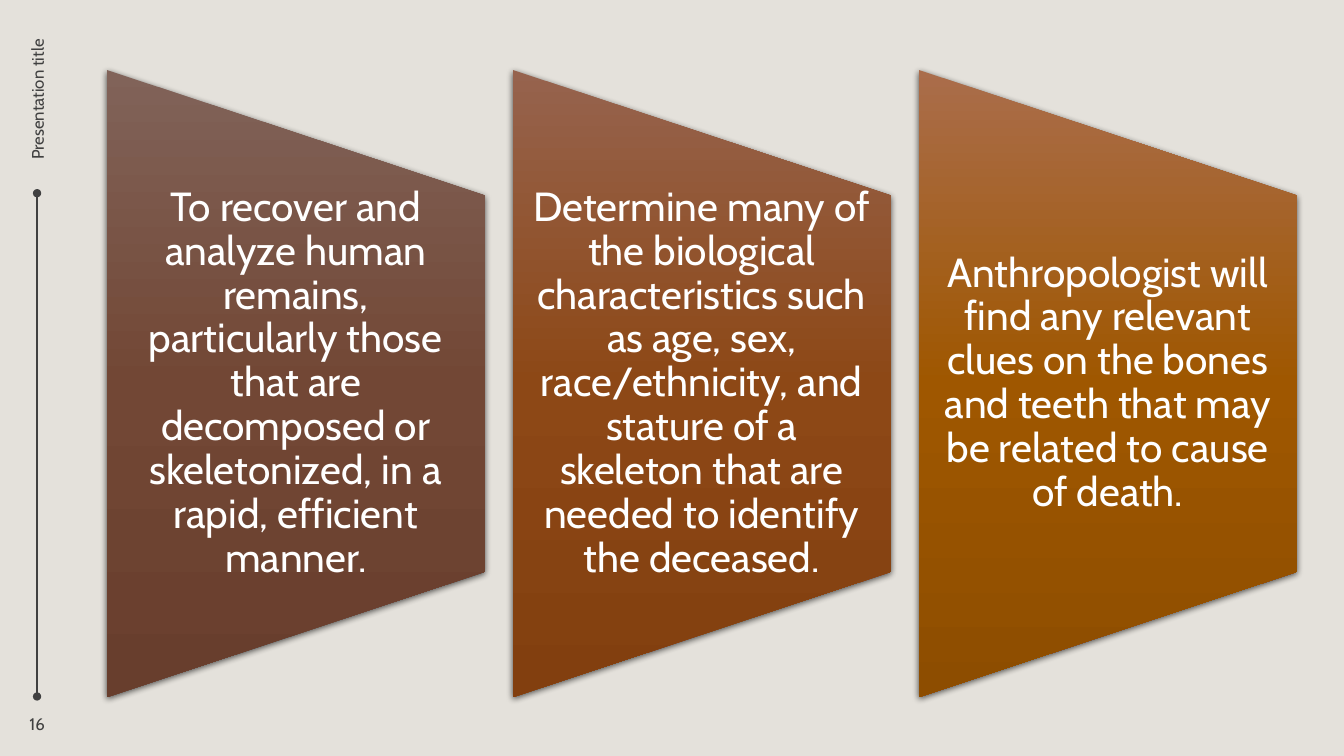
"""Build a slide with three tapered panels on the tasks of an anthropologist."""
from lxml import etree
from pptx import Presentation
from pptx.dml.color import RGBColor
from pptx.enum.shapes import MSO_CONNECTOR, MSO_SHAPE
from pptx.enum.text import MSO_ANCHOR, PP_ALIGN
from pptx.oxml import parse_xml
from pptx.oxml.ns import nsdecls, qn
from pptx.util import Pt

STRAIGHT = MSO_CONNECTOR.STRAIGHT
TAPER = MSO_SHAPE.FLOWCHART_MANUAL_OPERATION
MIDDLE = MSO_ANCHOR.MIDDLE
CENTER, RIGHT = PP_ALIGN.CENTER, PP_ALIGN.RIGHT

COLORS = {"back": "E4E1DB", "ink": "404040", "white": "FFFFFF", "shade": "000000"}
PANELS = [
    (("816359", "724735", "683E2D"),
     "To recover and analyze human remains, particularly those that are "
     "decomposed or skeletonized, in a rapid, efficient manner."),
    (("96634E", "8D4816", "823F0F"),
     "Determine many of the biological characteristics such as age, sex, "
     "race/ethnicity, and stature of a skeleton that are needed to identify "
     "the deceased."),
    (("AA6D4B", "9F5700", "8D4D00"),
     "Anthropologist will find any relevant clues on the bones and teeth "
     "that may be related to cause of death."),
]


class Deck:
    """Hold the style and the current slide; boxes are placed by their centre."""

    def __init__(self, font):
        """Start a deck with one blank slide."""
        self.font = font
        self.prs = Presentation()
        self.prs.slide_width, self.prs.slide_height = Pt(960), Pt(540)
        self.slide = self.prs.slides.add_slide(self.prs.slide_layouts[6])
        fill = self.slide.background.fill
        fill.solid()
        fill.fore_color.rgb = RGBColor.from_string(COLORS["back"])

    def text(self, words, x, y, w, h, size, color, align=CENTER, turn=0, pad=None, lead=None):
        """Add a text box."""
        box = self.slide.shapes.add_textbox(Pt(x - w / 2), Pt(y - h / 2), Pt(w), Pt(h))
        box.rotation = turn
        frame = box.text_frame
        frame.text = words
        frame.word_wrap = True
        frame.vertical_anchor = MIDDLE
        if pad is not None:
            frame.margin_left = frame.margin_right = Pt(pad)
            frame.margin_top = frame.margin_bottom = 0
        para = frame.paragraphs[0]
        para.alignment = align
        para.line_spacing = lead
        font = para.runs[0].font
        font.name, font.size = self.font, Pt(size)
        font.color.rgb = RGBColor.from_string(COLORS[color])

    def panel(self, x, y, w, h, stops):
        """Add a tapered shape, turned on its side, with a gradient and a shadow."""
        shape = self.slide.shapes.add_shape(
            TAPER, Pt(x - w / 2), Pt(y - h / 2), Pt(w), Pt(h))
        shape.rotation = 270
        shape.line.fill.background()
        marks = "".join(
            f'<a:gs pos="{i * 50000}"><a:srgbClr val="{tone}"/></a:gs>'
            for i, tone in enumerate(stops))
        props = shape.element.spPr
        props.insert(2, parse_xml(
            f'<a:gradFill {nsdecls("a")} rotWithShape="0"><a:gsLst>{marks}</a:gsLst>'
            '<a:lin ang="5400000" scaled="0"/></a:gradFill>'))
        props.append(parse_xml(
            f'<a:effectLst {nsdecls("a")}><a:outerShdw blurRad="{Pt(4.5)}" '
            f'dist="{Pt(1.5)}" dir="5400000" algn="ctr" rotWithShape="0">'
            f'<a:srgbClr val="{COLORS["shade"]}"><a:alpha val="63000"/></a:srgbClr>'
            '</a:outerShdw></a:effectLst>'))

    def rule(self, x, top, end):
        """Add an upright line with a dot at each end."""
        rule = self.slide.shapes.add_connector(STRAIGHT, Pt(x), Pt(top), Pt(x), Pt(end))
        rule.line.width = Pt(1)
        rule.line.color.rgb = RGBColor.from_string(COLORS["ink"])
        props = rule.element.spPr
        for tag in ("a:headEnd", "a:tailEnd"):
            etree.SubElement(props.ln, qn(tag), type="oval")
        etree.SubElement(props, qn("a:effectLst"))


def main():
    """Draw the slide and save it."""
    deck = Deck("Cabin")
    deck.rule(26.5, 138, 497.5)
    for i, (stops, words) in enumerate(PANELS):
        x = 211.3 + 290 * i
        deck.panel(x, 274, 448, 270, stops)
        deck.text(words, x, 274, 270, 268.6, 29, "white", pad=14.4, lead=0.9)
    deck.text("Presentation title", 26.5, 89, 136, 22, 12, "ink", RIGHT, turn=270)
    deck.text("16", 26.5, 517.3, 32, 22, 12, "ink")
    deck.prs.save("out.pptx")


if __name__ == "__main__":
    main()
